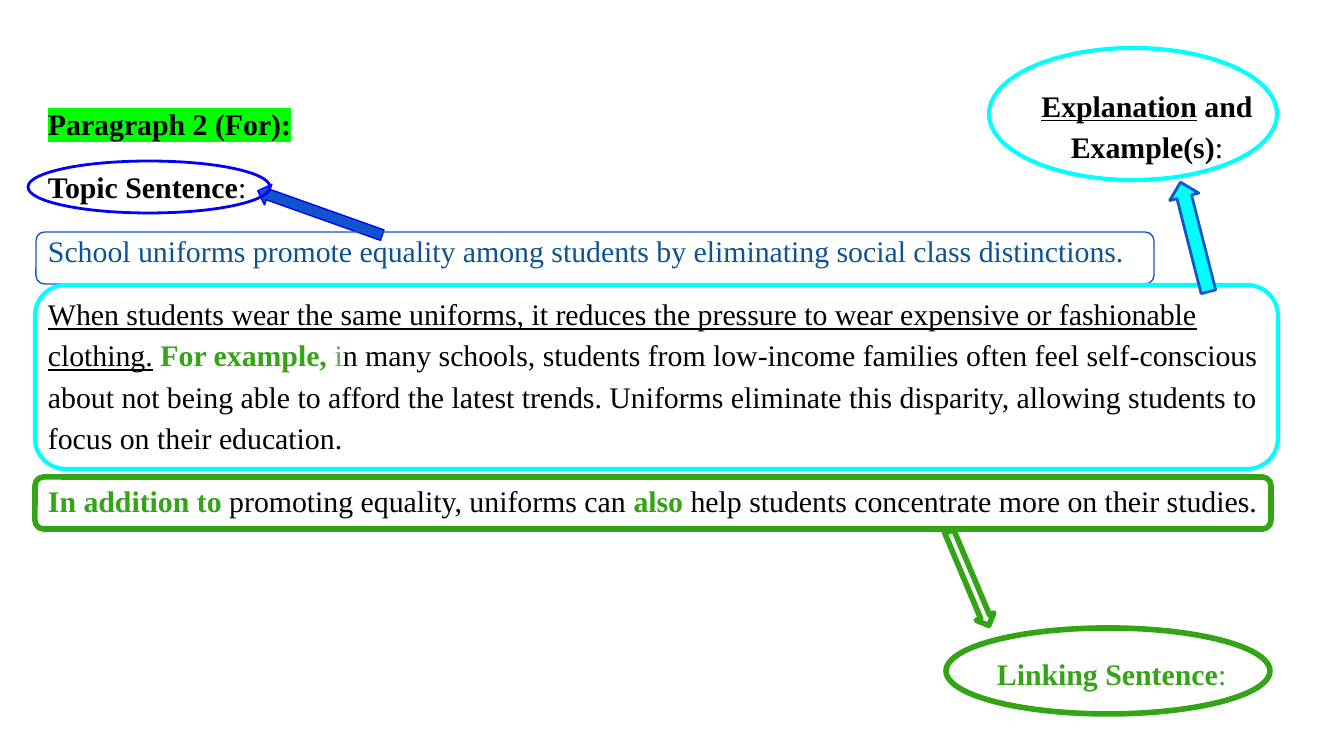
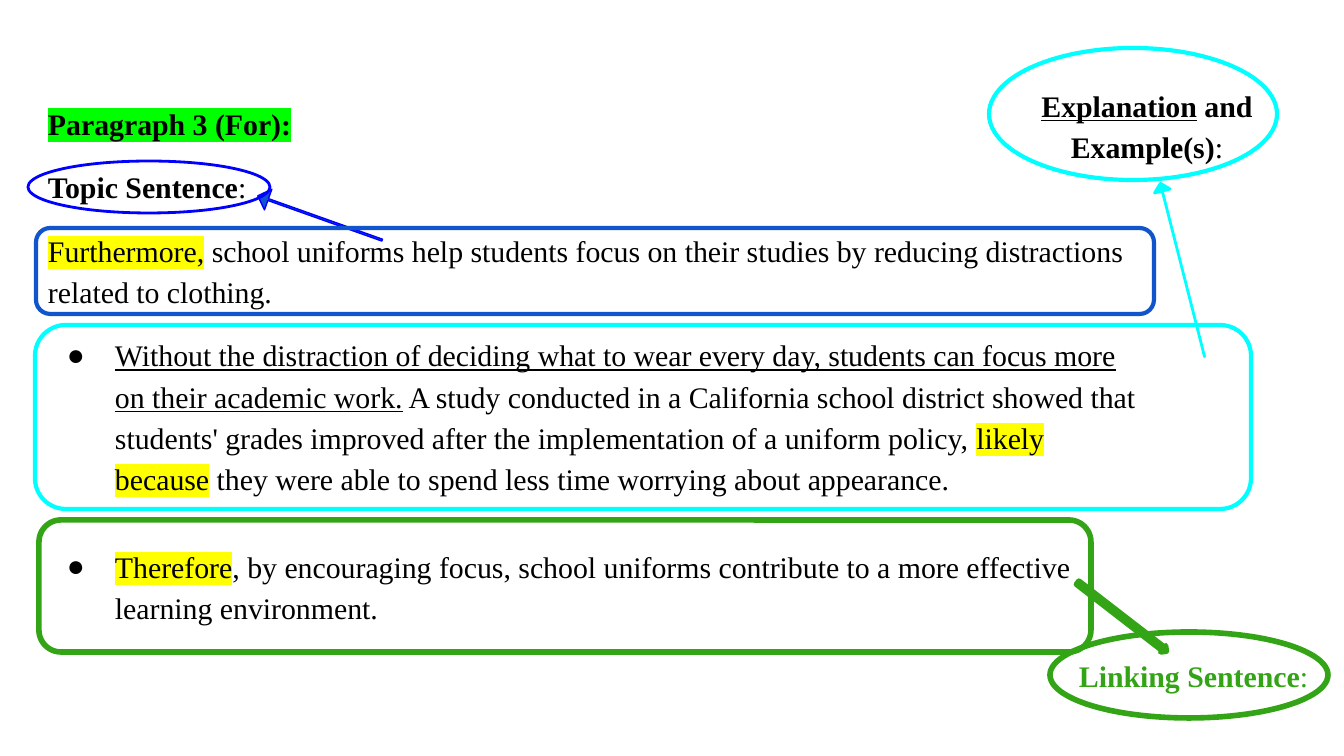
from dataclasses import dataclass

from lxml.etree import SubElement
from pptx import Presentation
from pptx.dml.color import RGBColor
from pptx.enum.shapes import MSO_SHAPE as Preset
from pptx.enum.text import MSO_ANCHOR as Anchor, PP_ALIGN as Align
from pptx.oxml.ns import qn
from pptx.util import Emu, Pt


@dataclass(frozen=True)
class Theme:
    font: str = "Times New Roman"
    size: int = 16
    leading: float = 1.15
    gap: int = 12
    ink: str = "000000"
    navy: str = "0B5394"
    royal: str = "1155CC"
    blue: str = "0000FF"
    cyan: str = "00FFFF"
    green: str = "33A415"
    sage: str = "6AA84F"
    lime: str = "00FF00"
    yellow: str = "FFFF00"


THEME = Theme()
PAGE_WIDTH, PAGE_HEIGHT = 1344, 756
INSET = 13
BULLET_MARGIN, BULLET_HANG = 67, 48


@dataclass(frozen=True)
class Span:
    text: str
    colour: str = THEME.ink
    bold: bool = False
    underline: bool = False
    highlight: str = ""


@dataclass(frozen=True)
class Para:
    spans: tuple
    bullet: bool = False
    before: int = THEME.gap


def px(length):
    """Convert px to EMU at 134.4 px to the inch."""
    return Emu(round(length * 914400 / 134.4))


def rgb(colour):
    return RGBColor.from_string(colour)


# Text
def add_span(paragraph, span):
    run = paragraph.add_run()
    run.text = span.text
    font = run.font
    font.size = Pt(THEME.size)
    font.bold = span.bold
    font.underline = span.underline
    font.color.rgb = rgb(span.colour)
    if span.highlight:
        properties = run._r.get_or_add_rPr()
        marker = SubElement(properties, qn("a:highlight"))
        SubElement(marker, qn("a:srgbClr"), val=span.highlight)
    font.name = THEME.font


def add_bullet(paragraph):
    properties = paragraph._p.get_or_add_pPr()
    properties.set("marL", str(px(BULLET_MARGIN)))
    properties.set("indent", str(-px(BULLET_HANG)))
    colour = SubElement(properties, qn("a:buClr"))
    SubElement(colour, qn("a:srgbClr"), val=THEME.ink)
    SubElement(properties, qn("a:buFont"), typeface=THEME.font)
    SubElement(properties, qn("a:buChar"), char="●")


def add_text(page, area, paras, inset_y=0, align=Align.LEFT):
    frame = page.shapes.add_textbox(*map(px, area)).text_frame
    frame.word_wrap = True
    frame.vertical_anchor = Anchor.TOP
    frame.margin_left = frame.margin_right = px(INSET)
    frame.margin_top = frame.margin_bottom = px(inset_y)
    for index, para in enumerate(paras):
        paragraph = frame.add_paragraph() if index else frame.paragraphs[0]
        if para.bullet:
            add_bullet(paragraph)
        paragraph.alignment = align
        paragraph.line_spacing = THEME.leading
        paragraph.space_before = Pt(para.before if index else 0)
        for span in para.spans:
            add_span(paragraph, span)


# Outlines and arrows
def add_outline(page, preset, area, colour, weight, fill=None):
    shape = page.shapes.add_shape(preset, *map(px, area))
    shape.shadow.inherit = False
    if fill:
        shape.fill.solid()
        shape.fill.fore_color.rgb = rgb(fill)
    else:
        shape.fill.background()
    shape.line.color.rgb = rgb(colour)
    shape.line.width = Pt(weight)
    return shape


def add_arrow(page, area, angle, colour, weight, fill=None, shaft=0.5):
    arrow = add_outline(page, Preset.RIGHT_ARROW, area, colour, weight, fill)
    arrow.rotation = angle
    arrow.adjustments[0] = shaft


# Labels in ovals
def add_topic_label(page):
    add_outline(page, Preset.OVAL, (28, 161, 242, 52), THEME.blue, 1.5)


def add_explanation_label(page):
    add_outline(page, Preset.OVAL, (989, 48, 288, 132), THEME.cyan, 2.25)
    spans = (
        Span("Explanation", bold=True, underline=True),
        Span(" and Example(s)", bold=True),
        Span(":"),
    )
    add_text(page, (999, 69, 296, 110), [Para(spans)], INSET, Align.CENTER)


def add_linking_label(page, oval, text_area):
    add_outline(page, Preset.OVAL, oval, THEME.green, 3)
    spans = (Span("Linking Sentence", THEME.green, bold=True), Span(":", THEME.green))
    add_text(page, text_area, [Para(spans)], INSET)


def opening(number):
    """The heading and topic label that start each essay paragraph."""
    heading = Span(f"Paragraph {number} (For):", bold=True, highlight=THEME.lime)
    return [Para((heading,)), Para((Span("Topic Sentence", bold=True), Span(":")))]


# Slides
def build_equality(page):
    topic = Para((Span("School uniforms promote equality among students by "
                       "eliminating social class distinctions.", THEME.navy),))
    explanation = Para((
        Span("When students wear the same uniforms, it reduces the pressure to "
             "wear expensive or fashionable clothing.", underline=True),
        Span(" "),
        Span("For example, ", THEME.green, bold=True),
        Span("i", THEME.sage),
        Span("n many schools, students from low-income families often feel "
             "self-conscious about not being able to afford the latest trends. "
             "Uniforms eliminate this disparity, allowing students to focus on "
             "their education."),
    ))
    linking = Para((
        Span("In addition to ", THEME.green, bold=True),
        Span("promoting equality, uniforms can "),
        Span("also ", THEME.green, bold=True),
        Span("help students concentrate more on their studies."),
    ))
    add_text(page, (35, 100, 1282, 425), opening(2) + [topic, explanation, linking])

    add_arrow(page, (254, 202, 132, 22), 199.6, THEME.blue, 0.75, THEME.royal)
    add_outline(page, Preset.ROUNDED_RECTANGLE, (36, 232, 1118, 52), THEME.royal, 0.75)
    add_outline(page, Preset.ROUNDED_RECTANGLE, (35, 285, 1243, 184), THEME.cyan, 2.25)
    add_arrow(page, (1138, 222, 113, 30), 255.7, THEME.royal, 1.5, THEME.cyan)
    add_explanation_label(page)
    add_topic_label(page)
    add_outline(page, Preset.ROUNDED_RECTANGLE, (35, 477, 1236, 52), THEME.green, 3)
    add_arrow(page, (918, 569, 102, 19), 67.2, THEME.green, 3)
    add_linking_label(page, (946, 628, 324, 86), (984, 637, 286, 68))


def build_focus(page):
    topic = Para((
        Span("Furthermore,", highlight=THEME.yellow),
        Span(" school uniforms help students focus on their studies by reducing "
             "distractions related to clothing."),
    ))
    explanation = Para((
        Span("Without the distraction of deciding what to wear every day, "
             "students can focus more on their academic work.", underline=True),
        Span(" A study conducted in a California school district showed that "
             "students' grades improved after the implementation of a uniform "
             "policy, "),
        Span("likely because", highlight=THEME.yellow),
        Span(" they were able to spend less time worrying about appearance."),
    ), bullet=True)
    linking = Para((
        Span("Therefore", highlight=THEME.yellow),
        Span(", by encouraging focus, school uniforms contribute to a more "
             "effective learning environment."),
    ), bullet=True, before=25)
    add_text(page, (35, 100, 1118, 530), opening(3) + [topic, explanation, linking])

    add_arrow(page, (254, 207, 132, 22), 199.6, THEME.blue, 0.75, THEME.royal, 0.09)
    add_outline(page, Preset.ROUNDED_RECTANGLE, (36, 228, 1118, 86), THEME.royal, 2.25)
    add_outline(page, Preset.ROUNDED_RECTANGLE, (35, 325, 1216, 184), THEME.cyan, 2.25)
    add_arrow(page, (1093, 262, 179, 16), 255.7, THEME.cyan, 1.5, THEME.cyan, 0)
    add_explanation_label(page)
    add_topic_label(page)
    add_outline(page, Preset.ROUNDED_RECTANGLE, (39, 520, 1052, 132), THEME.green, 3)
    add_arrow(page, (1066, 613, 112, 8), 37.7, THEME.green, 3, THEME.green)
    add_linking_label(page, (1050, 632, 278, 86), (1066, 639, 278, 68))


def main():
    deck = Presentation()
    deck.slide_width, deck.slide_height = px(PAGE_WIDTH), px(PAGE_HEIGHT)
    for build in (build_equality, build_focus):
        build(deck.slides.add_slide(deck.slide_layouts[6]))
    deck.save("out.pptx")


if __name__ == "__main__":
    main()
